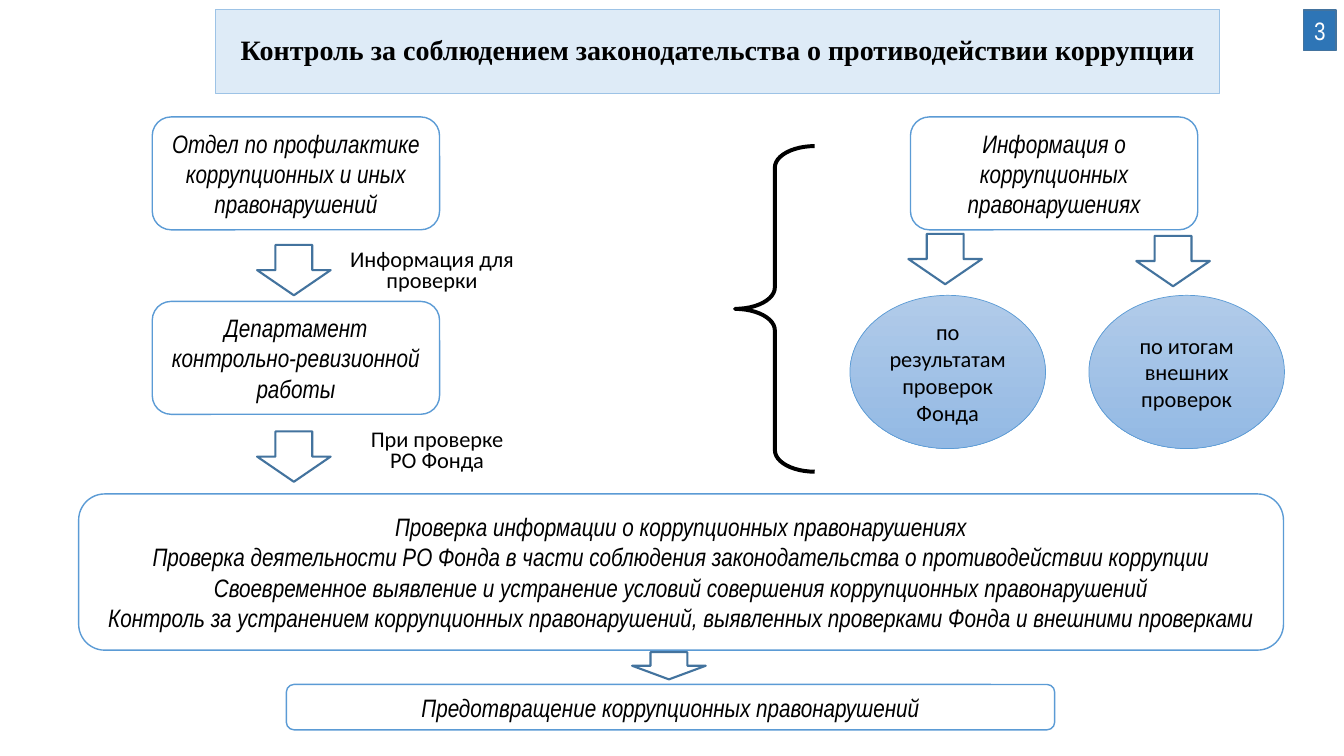
from pptx import Presentation
from pptx.dml.color import RGBColor
from pptx.enum.shapes import MSO_SHAPE
from pptx.enum.text import MSO_ANCHOR, MSO_AUTO_SIZE, PP_ALIGN
from pptx.util import Inches, Pt

COLORS = {
    "black": "000000", "white": "FFFFFF", "title_fill": "DEEBF7", "title_line": "9DC3E6",
    "box_line": "5B9BD5", "arrow_line": "43739E", "badge": "2E75B6",
    "oval_top": "B1CBE9", "oval_bottom": "93B9E4",
}


def color(name):
    return RGBColor.from_string(COLORS[name])


def write(shape, text, font, size, ink="black", bold=False, italic=False, spacing=None):
    """Fill the shape with centred text, one paragraph per line."""
    frame = shape.text_frame
    frame.text = text
    frame.word_wrap = True
    frame.auto_size = MSO_AUTO_SIZE.NONE
    frame.vertical_anchor = MSO_ANCHOR.MIDDLE
    for paragraph in frame.paragraphs:
        paragraph.alignment = PP_ALIGN.CENTER
        paragraph.line_spacing = spacing
        for run in paragraph.runs:
            run.font.name = font
            run.font.size = Pt(size)
            run.font.bold = bold
            run.font.italic = italic
            run.font.color.rgb = color(ink)


prs = Presentation()
prs.slide_width, prs.slide_height = Inches(13.33), Inches(7.5)
slide = prs.slides.add_slide(prs.slide_layouts[5])
shapes = slide.shapes

# Title
title = shapes.title
title.left, title.top, title.width, title.height = map(Inches, (2.14, 0.09, 9.96, 0.84))
title.fill.solid()
title.fill.fore_color.rgb = color("title_fill")
title.line.color.rgb = color("title_line")
title.line.width = Pt(0.75)
write(title, "Контроль за соблюдением законодательства о противодействии коррупции",
      "Times New Roman", 20, bold=True, spacing=0.9)

# Rounded boxes
tasks = "\n".join([
    "Проверка информации о коррупционных правонарушениях",
    "Проверка деятельности РО Фонда в части соблюдения законодательства о противодействии коррупции",
    "Своевременное выявление и устранение условий совершения коррупционных правонарушений",
    "Контроль за устранением коррупционных правонарушений, выявленных проверками Фонда и внешними проверками",
])
boxes = [
    (1.51, 1.16, 2.85, 1.12, "Отдел по профилактике коррупционных и иных правонарушений"),
    (1.51, 2.99, 2.85, 1.12, "Департамент контрольно-ревизионной работы"),
    (9.03, 1.16, 2.85, 1.12, "Информация о коррупционных правонарушениях"),
    (0.78, 4.9, 11.95, 1.55, tasks),
    (2.84, 6.79, 7.62, 0.45, "Предотвращение коррупционных правонарушений"),
]
for *place, text in boxes:
    box = shapes.add_shape(MSO_SHAPE.ROUNDED_RECTANGLE, *map(Inches, place))
    box.shadow.inherit = False
    box.fill.solid()
    box.fill.fore_color.rgb = color("white")
    box.line.color.rgb = color("box_line")
    box.line.width = Pt(1)
    write(box, text, "Arial Narrow", 18, italic=True)

# Sources of information
for left, text in [(8.43, "по результатам проверок Фонда"), (10.8, "по итогам внешних проверок")]:
    oval = shapes.add_shape(MSO_SHAPE.OVAL, Inches(left), Inches(2.93), Inches(1.94), Inches(1.52))
    oval.shadow.inherit = False
    oval.fill.gradient()
    oval.fill.gradient_angle = 270
    for stop, name, position in zip(oval.fill.gradient_stops, ("oval_top", "oval_bottom"), (0, 1)):
        stop.color.rgb = color(name)
        stop.position = position
    oval.line.color.rgb = color("box_line")
    oval.line.width = Pt(0.5)
    write(oval, text, "Calibri", 16)

# Down arrows
for left, top, height in [(2.55, 2.43, 0.5), (2.55, 4.28, 0.5), (9.01, 2.32, 0.5),
                          (11.27, 2.34, 0.5), (6.27, 6.47, 0.27)]:
    arrow = shapes.add_shape(MSO_SHAPE.DOWN_ARROW, Inches(left), Inches(top), Inches(0.73), Inches(height))
    arrow.shadow.inherit = False
    arrow.fill.background()
    arrow.line.color.rgb = color("arrow_line")
    arrow.line.width = Pt(1.5)

# Arrow captions
captions = [
    (3.11, 2.43, 2.35, 0.53, "Информация для проверки"),
    (3.49, 4.27, 1.69, 0.42, "При проверке\nРО Фонда"),
]
for *place, text in captions:
    caption = shapes.add_textbox(*map(Inches, place))
    write(caption, text, "Calibri", 16, spacing=0.8)

# Brace between the two halves
brace = shapes.add_shape(MSO_SHAPE.LEFT_BRACE, Inches(7.29), Inches(1.45), Inches(0.79), Inches(3.23))
brace.adjustments[0] = 0.27
brace.shadow.inherit = False
brace.fill.background()
brace.line.color.rgb = color("black")
brace.line.width = Pt(2.83)

# Page number
badge = shapes.add_shape(MSO_SHAPE.RECTANGLE, Inches(12.93), Inches(0.1), Inches(0.32), Inches(0.4))
badge.shadow.inherit = False
badge.fill.solid()
badge.fill.fore_color.rgb = color("badge")
badge.line.color.rgb = color("arrow_line")
badge.line.width = Pt(1)
write(badge, "3", "Arial Narrow", 18, ink="white")

prs.save("out.pptx")
